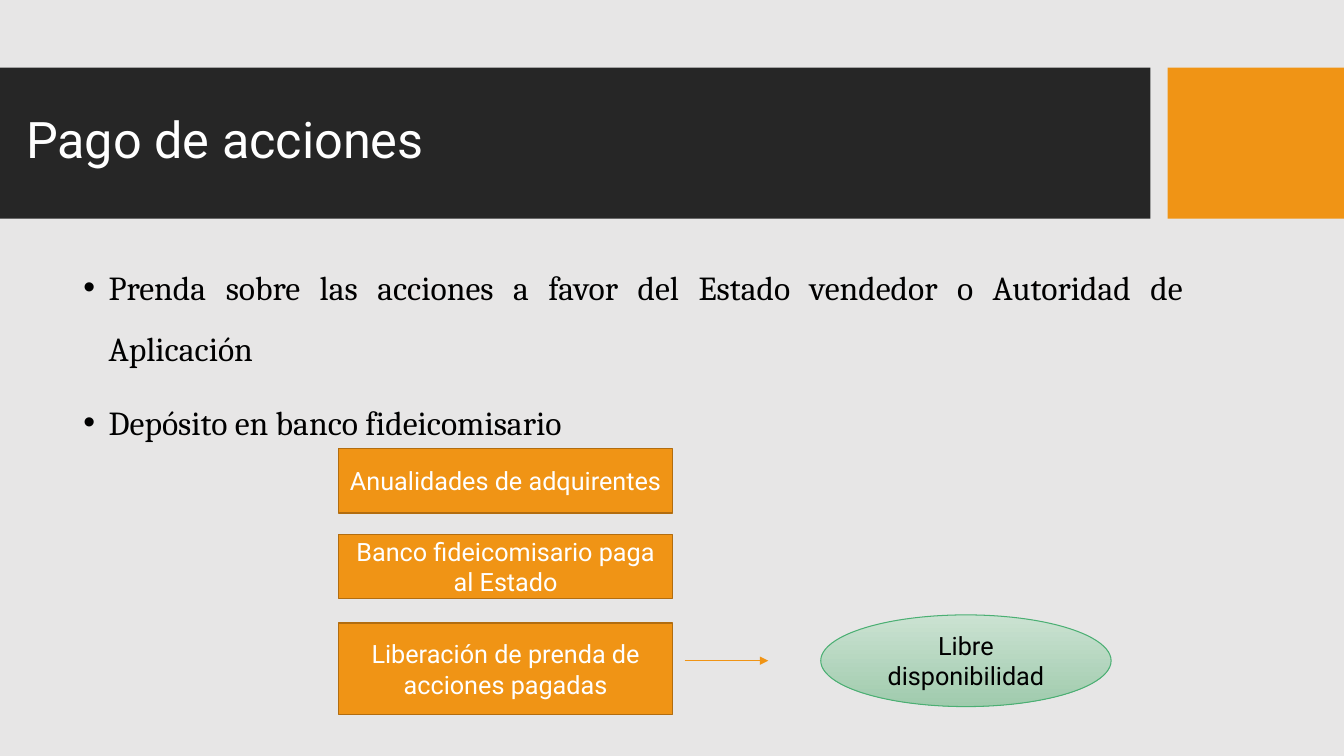
from lxml import etree
from pptx import Presentation
from pptx.dml.color import RGBColor
from pptx.enum.shapes import MSO_CONNECTOR, MSO_SHAPE
from pptx.enum.text import MSO_ANCHOR, PP_ALIGN
from pptx.oxml.ns import qn
from pptx.util import Inches, Pt

RECT, OVAL = MSO_SHAPE.RECTANGLE, MSO_SHAPE.OVAL
STRAIGHT = MSO_CONNECTOR.STRAIGHT
TOP, MIDDLE = MSO_ANCHOR.TOP, MSO_ANCHOR.MIDDLE
LEFT, CENTER, JUSTIFY = PP_ALIGN.LEFT, PP_ALIGN.CENTER, PP_ALIGN.JUSTIFY

PALE = RGBColor(0xE7, 0xE6, 0xE6)
DARK = RGBColor(0x26, 0x26, 0x26)
ORANGE = RGBColor(0xF0, 0x94, 0x15)
BROWN = RGBColor(0xB2, 0x6D, 0x10)
GREEN = RGBColor(0x4B, 0xAF, 0x73)
MINT = RGBColor(0xCB, 0xE2, 0xD2)
SAGE = RGBColor(0xA0, 0xCB, 0xAD)
WHITE = RGBColor(0xFF, 0xFF, 0xFF)
BLACK = RGBColor(0, 0, 0)

BULLETS = [
    "Prenda sobre las acciones a favor del Estado vendedor o Autoridad de Aplicación",
    "Depósito en banco fideicomisario",
]
STEPS = [
    ("Anualidades de adquirentes", 0, 0.64),
    ("Banco fideicomisario paga al Estado", 0.85, 0.64),
    ("Liberación de prenda de acciones pagadas", 1.73, 0.91),
]


def write(p, text, size, color, name="Roboto", **layout):
    """Put one formatted run into a paragraph."""
    for key, value in layout.items():
        setattr(p, key, value)
    r = p.add_run()
    r.text = text
    for key, value in {"size": Pt(size), "name": name}.items():
        setattr(r.font, key, value)
    r.font.color.rgb = color


def add_box(slide, kind, box, fill, line=None, width=1):
    """Add a preset shape with a plain fill and an optional outline."""
    s = slide.shapes.add_shape(kind, *map(Inches, box))
    s.shadow.inherit = False
    s.fill.solid()
    s.fill.fore_color.rgb = fill
    if line is None:
        s.line.fill.background()
    else:
        s.line.color.rgb = line
        s.line.width = Pt(width)
    return s


def add_label(s, text, color):
    """Centre a label in a shape."""
    tf = s.text_frame
    tf.word_wrap = True
    tf.vertical_anchor = MIDDLE
    write(tf.paragraphs[0], text, 18, color, alignment=CENTER)


def add_text_frame(slide, box, anchor):
    """Add a wrapping text box and return its frame."""
    tf = slide.shapes.add_textbox(*map(Inches, box)).text_frame
    tf.word_wrap = True
    tf.vertical_anchor = anchor
    return tf


def add_header(slide, x, y, w, h):
    """Draw the title band and its accent block."""
    accent, gap = 1.75, 0.17
    band = w - accent - gap
    add_box(slide, RECT, (x, y, band, h), DARK)
    add_box(slide, RECT, (x + w - accent, y, accent, h), ORANGE)
    tf = add_text_frame(slide, (x + 0.16, y + 0.15, 11.1, 1.18), MIDDLE)
    write(tf.paragraphs[0], "Pago de acciones", 36, WHITE, line_spacing=0.9)


def add_bullets(slide, x, y, w, h):
    """Write the justified bullet list."""
    tf = add_text_frame(slide, (x, y, w, h), TOP)
    for i, text in enumerate(BULLETS):
        p = tf.add_paragraph() if i else tf.paragraphs[0]
        pPr = p._p.get_or_add_pPr()
        pPr.set("marL", str(Inches(0.25)))
        pPr.set("indent", str(Inches(-0.25)))
        etree.SubElement(pPr, qn("a:buFont")).set("typeface", "Arial")
        etree.SubElement(pPr, qn("a:buChar")).set("char", "•")
        write(p, text, 24, BLACK, "Cambria", line_spacing=1.5,
              space_before=Pt(10 if i else 0), alignment=LEFT if i else JUSTIFY)


def add_arrow(slide, x1, x2, y):
    """Draw a horizontal arrow pointing right."""
    s = slide.shapes.add_connector(STRAIGHT, *map(Inches, (x1, y, x2, y)))
    s.line.color.rgb = ORANGE
    s.line.width = Pt(0.75)
    etree.SubElement(s.line._get_or_add_ln(), qn("a:tailEnd")).set("type", "triangle")
    etree.SubElement(s._element.spPr, qn("a:effectLst"))


def add_flow(slide, x, y, w):
    """Stack the payment steps and lead the last one to its outcome."""
    for text, dy, h in STEPS:
        s = add_box(slide, RECT, (x, y + dy, w, h), ORANGE, BROWN)
        add_label(s, text, WHITE)
    outcome_y, outcome_h = y + 1.65, 0.91
    add_arrow(slide, x + w + 0.12, x + w + 0.95, outcome_y + outcome_h / 2)
    s = add_box(slide, OVAL, (x + w + 1.47, outcome_y, 2.88, outcome_h),
                MINT, GREEN, 0.75)
    s.fill.gradient()
    s.fill.gradient_angle = 270
    for stop, color in zip(s.fill.gradient_stops, (MINT, SAGE)):
        stop.color.rgb = color
    add_label(s, "Libre disponibilidad", BLACK)


def main():
    """Build and save the slide."""
    prs = Presentation()
    prs.slide_width, prs.slide_height = Inches(13.33), Inches(7.5)
    slide = prs.slides.add_slide(prs.slide_layouts[6])
    slide.background.fill.solid()
    slide.background.fill.fore_color.rgb = PALE
    add_header(slide, 0, 0.67, 13.33, 1.5)
    add_bullets(slide, 0.73, 2.4, 11.1, 4.62)
    add_flow(slide, 3.36, 4.45, 3.31)
    prs.save("out.pptx")


if __name__ == "__main__":
    main()
